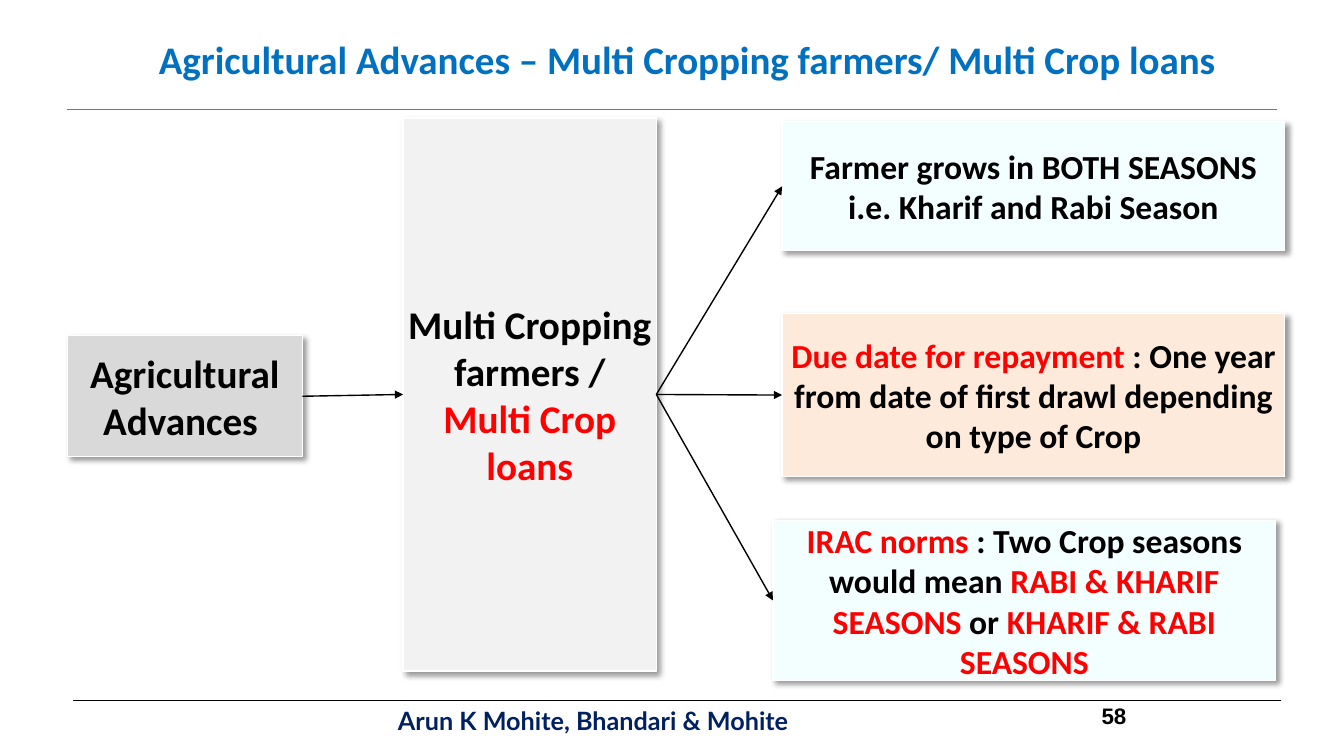
from lxml import etree
from pptx import Presentation
from pptx.dml.color import RGBColor
from pptx.enum.shapes import MSO_CONNECTOR, MSO_SHAPE
from pptx.enum.text import MSO_ANCHOR, PP_ALIGN
from pptx.oxml import parse_xml
from pptx.oxml.ns import nsdecls, qn
from pptx.util import Cm, Pt

RECTANGLE = MSO_SHAPE.RECTANGLE
STRAIGHT = MSO_CONNECTOR.STRAIGHT
TOP, MIDDLE = MSO_ANCHOR.TOP, MSO_ANCHOR.MIDDLE
LEFT, CENTER = PP_ALIGN.LEFT, PP_ALIGN.CENTER
LEFT_SITE, RIGHT_SITE = 1, 3

COLORS = {
    "black": "000000",
    "white": "FFFFFF",
    "red": "FF0000",
    "title": "0070C0",
    "navy": "002060",
    "rule": "4B7EBC",
    "grey": "D9D9D9",
    "pale grey": "F2F2F2",
    "peach": "FDEADA",
    "ice": "F3FEFF",
}
SOFT_SHADOW = (
    f'<a:outerShdw {nsdecls("a")} blurRad="{Pt(4)}" dist="{Pt(3)}" '
    'dir="2700000" algn="tl" rotWithShape="0">'
    f'<a:srgbClr val="{COLORS["black"]}"><a:alpha val="40000"/></a:srgbClr>'
    "</a:outerShdw>"
)


def rgb(name):
    return RGBColor.from_string(COLORS[name])


class FlowSlide:
    """Holds the slide and its style; each method adds one kind of element."""

    font = "Calibri"
    box_inset = Cm(0.1)

    def __init__(self, deck):
        self.shapes = deck.slides.add_slide(deck.slide_layouts[6]).shapes

    def fill_text(self, frame, runs, size, font, align, anchor):
        """Fill a frame with one bold paragraph of (text, colour) runs."""
        frame.word_wrap = True
        frame.vertical_anchor = anchor
        paragraph = frame.paragraphs[0]
        paragraph.alignment = align
        paragraph.font.name = font
        paragraph.font.size = Pt(size)
        paragraph.font.bold = True
        for text, color in runs:
            run = paragraph.add_run()
            run.text = text
            run.font.color.rgb = rgb(color)

    def label(self, place, text, color, size, font=font, align=LEFT, anchor=TOP):
        textbox = self.shapes.add_textbox(*map(Cm, place))
        self.fill_text(textbox.text_frame, [(text, color)], size, font, align, anchor)

    def box(self, place, fill, size, *runs):
        box = self.shapes.add_shape(RECTANGLE, *map(Cm, place))
        box.fill.solid()
        box.fill.fore_color.rgb = rgb(fill)
        box.line.color.rgb = rgb("white")
        box.line.width = Pt(1)
        box.shadow.inherit = False
        effects = box.element.spPr.find(qn("a:effectLst"))
        effects.append(parse_xml(SOFT_SHADOW))
        frame = box.text_frame
        frame.margin_left = frame.margin_right = self.box_inset
        frame.margin_top = frame.margin_bottom = self.box_inset
        self.fill_text(frame, runs, size, self.font, CENTER, MIDDLE)
        return box

    def line(self, start, end, color="black", width=0.75):
        line = self.shapes.add_connector(STRAIGHT, *map(Cm, start + end))
        line.line.color.rgb = rgb(color)
        line.line.width = Pt(width)
        etree.SubElement(line.element.spPr, qn("a:effectLst"))
        return line

    def arrow(self, source, target):
        """Link the right side of one box to the left side of another."""
        arrow = self.line((0, 0), (1, 1), width=1)
        arrow.begin_connect(source, RIGHT_SITE)
        arrow.end_connect(target, LEFT_SITE)
        outline = arrow.element.spPr.find(qn("a:ln"))
        etree.SubElement(outline, qn("a:tailEnd"), type="triangle")


def main():
    deck = Presentation()
    deck.slide_width, deck.slide_height = Cm(33.87), Cm(19.05)
    slide = FlowSlide(deck)

    slide.line((1.7, 2.75), (32.18, 2.75), "rule")
    slide.label((9.78, 17.86, 15.27, 0.61), "Arun K Mohite, Bhandari & Mohite",
                "navy", 18, font="Lato", anchor=MIDDLE)
    slide.line((1.85, 17.65), (32.28, 17.65))
    slide.label((27.51, 17.58, 1.7, 0.84), "58", "black", 16, font="Arial")
    slide.label((2.08, 0.76, 30.48, 1.88),
                "Agricultural Advances – Multi Cropping farmers/ Multi Crop loans",
                "title", 27.9, align=CENTER)

    advances = slide.box((1.7, 8.46, 5.92, 3.05), "grey", 28,
                         ("Agricultural Advances ", "black"))
    farmers = slide.box((10.16, 2.97, 6.38, 13.94), "pale grey", 28,
                        ("Multi Cropping farmers / ", "black"),
                        ("Multi Crop loans", "red"))
    seasons = slide.box(
        (19.71, 3.07, 12.67, 3.25), "ice", 24,
        ("Farmer grows in BOTH SEASONS i.e. Kharif and Rabi Season", "black"))
    due_date = slide.box(
        (19.71, 7.9, 12.67, 4.11), "peach", 24,
        ("Due date for repayment ", "red"),
        (": One year from date of first drawl depending on type of Crop", "black"))
    norms = slide.box(
        (19.48, 13.11, 12.67, 4.04), "ice", 24,
        ("IRAC norms ", "red"),
        (": Two Crop seasons would mean", "black"),
        (" RABI & KHARIF SEASONS", "red"),
        (" or ", "black"),
        ("KHARIF & RABI SEASONS", "red"))

    slide.arrow(advances, farmers)
    for detail in (seasons, due_date, norms):
        slide.arrow(farmers, detail)

    deck.save("out.pptx")


if __name__ == "__main__":
    main()
